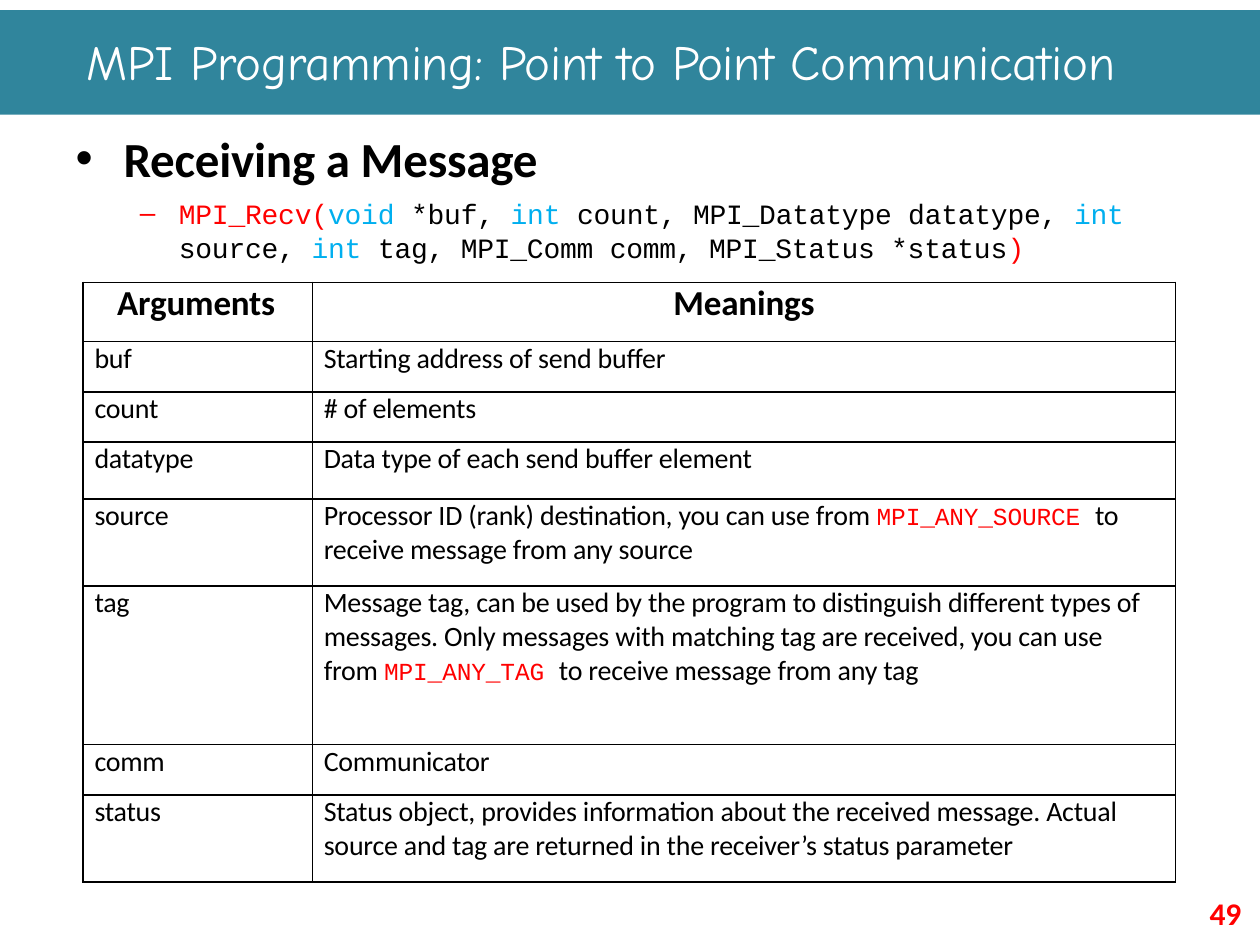
from dataclasses import dataclass

from lxml.etree import SubElement
from pptx import Presentation
from pptx.dml.color import RGBColor
from pptx.enum.shapes import MSO_SHAPE
from pptx.enum.text import PP_ALIGN
from pptx.oxml.ns import qn
from pptx.util import Inches, Pt


@dataclass(frozen=True)
class Theme:
    band: str = "30859C"
    white: str = "FFFFFF"
    black: str = "000000"
    red: str = "FF0000"
    blue: str = "00AFEF"
    body: str = "Calibri"
    code: str = "Courier New"
    display: str = "Comic Neue"
    heading: int = 28
    header: int = 20
    number: int = 18
    text: int = 16
    small: int = 14
    tracking: int = -10


T = Theme()
BODY = {"name": T.body, "size": T.text, "bold": False, "color": T.black}
HEADER = BODY | {"size": T.header, "bold": True}
HEADING = BODY | {"size": T.heading, "bold": True}
NUMBER = BODY | {"size": T.number, "bold": True, "color": T.red}
TITLE = BODY | {"name": T.display, "size": T.heading, "color": T.white}
CODE = BODY | {"name": T.code}
TYPE = CODE | {"color": T.blue}
CALL = CODE | {"color": T.red}
CONSTANT = CALL | {"size": T.small}

SIGNATURE = [
    ("MPI_Recv(", CALL), ("void ", TYPE), ("*buf, ", CODE),
    ("int ", TYPE), ("count, MPI_Datatype datatype, ", CODE),
    ("int ", TYPE), ("source, ", CODE), ("int ", TYPE),
    ("tag, MPI_Comm comm, MPI_Status *status", CODE), (")", CALL),
]
ARGUMENTS = [
    (0.4, "buf", [("Starting address of send buffer", BODY)]),
    (0.4, "count", [("# of elements", BODY)]),
    (0.45, "datatype", [("Data type of each send buffer element", BODY)]),
    (0.69, "source", [
        ("Processor ID (rank) destination, you can use from ", BODY),
        ("MPI_ANY_SOURCE ", CONSTANT),
        ("to receive message from any source", BODY)]),
    (1.26, "tag", [
        ("Message tag, can be used by the program to distinguish different "
         "types of messages. Only messages with matching tag are received, "
         "you can use from ", BODY),
        ("MPI_ANY_TAG ", CONSTANT),
        ("to receive message from any tag", BODY)]),
    (0.4, "comm", [("Communicator", BODY)]),
    (0.69, "status", [
        ("Status object, provides information about the received message. "
         "Actual source and tag are returned in the receiver’s status "
         "parameter", BODY)]),
]


def set_attrs(obj, values):
    for name, value in values.items():
        setattr(obj, name, value)


def write(p, runs, left=0.0, hang=0.0, bullet=None, **fmt):
    set_attrs(p, fmt)
    pPr = p._p.get_or_add_pPr()
    pPr.set("marL", str(Inches(left)))
    pPr.set("indent", str(Inches(-hang)))
    if bullet:
        char, color = bullet
        clr = SubElement(SubElement(pPr, qn("a:buClr")), qn("a:srgbClr"))
        clr.set("val", color)
        SubElement(pPr, qn("a:buFont")).set("typeface", "Arial")
        SubElement(pPr, qn("a:buChar")).set("char", char)
    for text, style in runs:
        r = p.add_run()
        r.text = text
        set_attrs(r.font, {"name": style["name"], "size": Pt(style["size"]),
                           "bold": style["bold"]})
        r.font.color.rgb = RGBColor.from_string(style["color"])
        r.font._element.set("spc", str(T.tracking))


def clear_margins(obj):
    set_attrs(obj, dict.fromkeys(
        ("margin_left", "margin_top", "margin_right", "margin_bottom"), 0))


def add_text(s, box, runs, **fmt):
    tf = s.shapes.add_textbox(*map(Inches, box)).text_frame
    clear_margins(tf)
    tf.word_wrap = True
    write(tf.paragraphs[0], runs, **fmt)


def add_band(s):
    sp = s.shapes.add_shape(MSO_SHAPE.RECTANGLE, 0, Inches(0.08),
                            Inches(10), Inches(0.83))
    sp.shadow.inherit = False
    sp.fill.solid()
    sp.fill.fore_color.rgb = RGBColor.from_string(T.band)
    sp.line.fill.background()


def fill_cell(cell, runs, **fmt):
    clear_margins(cell)
    tcPr = cell._tc.get_or_add_tcPr()
    for side in ("lnL", "lnR", "lnT", "lnB"):
        ln = SubElement(tcPr, qn(f"a:{side}"), w=str(Pt(1)))
        fill = SubElement(ln, qn("a:solidFill"))
        SubElement(fill, qn("a:srgbClr"), val=T.black)
    cell.fill.background()
    write(cell.text_frame.paragraphs[0], runs, **fmt)


def add_arguments(s):
    heights = [0.47] + [row[0] for row in ARGUMENTS]
    widths = (1.82, 6.85)
    table = s.shapes.add_table(
        len(heights), len(widths), Inches(0.66), Inches(2.24),
        Inches(sum(widths)), Inches(sum(heights))).table
    for col, width in zip(table.columns, widths):
        col.width = Inches(width)
    for row, height in zip(table.rows, heights):
        row.height = Inches(height)
    fill_cell(table.cell(0, 0), [("Arguments", HEADER)], left=0.27,
              space_before=Pt(1.9))
    fill_cell(table.cell(0, 1), [("Meanings", HEADER)],
              alignment=PP_ALIGN.CENTER, space_before=Pt(1.9))
    for i, (_, name, meaning) in enumerate(ARGUMENTS, 1):
        for j, runs in enumerate(([(name, BODY)], meaning)):
            cell = table.cell(i, j)
            fill_cell(cell, runs, left=0.09, space_before=Pt(2.1))
            cell.margin_right = Inches(0.15)


def main():
    prs = Presentation()
    set_attrs(prs, {"slide_width": Inches(10), "slide_height": Inches(7.5)})
    s = prs.slides.add_slide(prs.slide_layouts[6])
    add_band(s)
    add_text(s, (0.59, 1.02, 3.72, 0.47), [("Receiving a Message", HEADING)],
             left=0.39, hang=0.38, bullet=("•", T.black))
    add_text(s, (9.56, 7.14, 0.34, 0.31), [("49", NUMBER)], left=0.04,
             line_spacing=Pt(18.1))
    add_text(s, (1.09, 1.56, 7.96, 0.55), SIGNATURE, left=0.33, hang=0.31,
             bullet=("–", T.red))
    add_arguments(s)
    add_text(s, (0.68, 0.25, 8.66, 0.47),
             [("MPI Programming: Point to Point Communication", TITLE)],
             left=0.01)
    prs.save("out.pptx")


if __name__ == "__main__":
    main()
